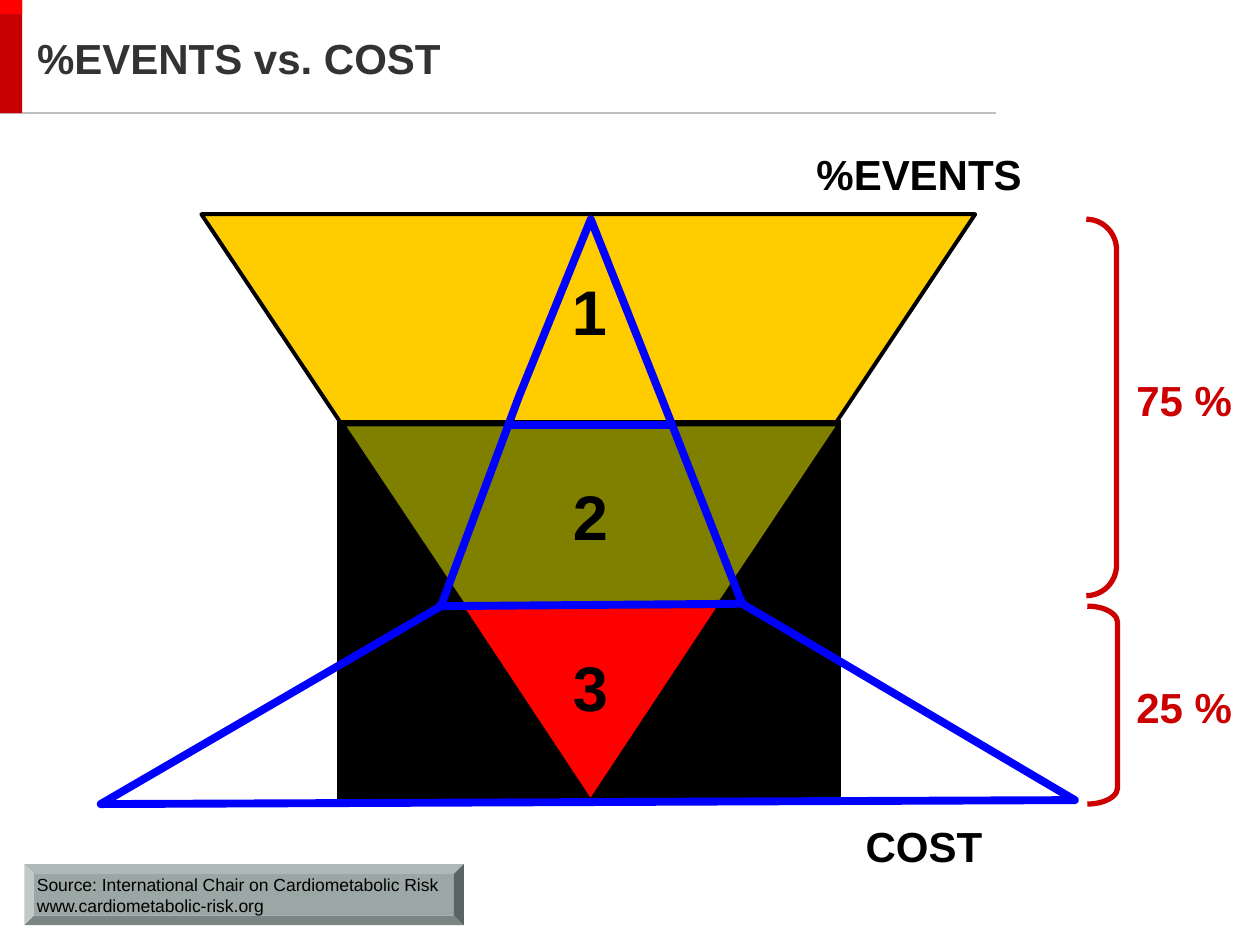
"""Build the events versus cost pyramid slide."""
from lxml import etree
from pptx import Presentation
from pptx import util as u
from pptx.dml.color import RGBColor
from pptx.enum import shapes, text
from pptx.oxml.ns import qn

BLACK = RGBColor(0x00, 0x00, 0x00)
TITLE_GREY = RGBColor(0x33, 0x33, 0x33)
RULE_GREY = RGBColor(0xC0, 0xC0, 0xC0)
SOURCE_GREY = RGBColor(0x9A, 0xA7, 0xA5)
DARK_RED = RGBColor(0xC8, 0x00, 0x00)
BRIGHT_RED = RGBColor(0xFE, 0x00, 0x00)
LABEL_RED = RGBColor(0xCC, 0x00, 0x00)
YELLOW = RGBColor(0xFF, 0xCC, 0x00)
OLIVE = RGBColor(0x80, 0x80, 0x00)
RED = RGBColor(0xFF, 0x00, 0x00)
BLUE = RGBColor(0x00, 0x00, 0xFF)

SHAPE = shapes.MSO_SHAPE


def style_shape(shape, fill=None, line=None, width=0.75):
    """Set the fill and outline of a shape and drop its shadow."""
    shape.shadow.inherit = False
    if fill is None:
        shape.fill.background()
    else:
        shape.fill.solid()
        shape.fill.fore_color.rgb = fill
    if line is None:
        shape.line.fill.background()
    else:
        shape.line.color.rgb = line
        shape.line.width = u.Pt(width)


def add_block(slide, kind, box, **style):
    """Add a preset shape; box is left, top, width and height in centimetres."""
    shape = slide.shapes.add_shape(kind, *map(u.Cm, box))
    style_shape(shape, **style)
    return shape


def add_inverted_triangle(slide, box, fill):
    """Add a black-edged triangle that points down."""
    triangle = add_block(slide, SHAPE.ISOSCELES_TRIANGLE, box,
                         fill=fill, line=BLACK, width=2.25)
    triangle._element.spPr.find(qn("a:xfrm")).set("flipV", "1")


def add_bracket(slide, box, curve):
    """Add a red right bracket with the given corner curve."""
    bracket = add_block(slide, SHAPE.RIGHT_BRACKET, box, line=LABEL_RED, width=3)
    bracket.adjustments[0] = curve


def add_line(slide, start, end, color, width):
    """Add a straight line between two points in centimetres."""
    line = slide.shapes.add_connector(
        shapes.MSO_CONNECTOR.STRAIGHT, *map(u.Cm, start + end))
    line.line.color.rgb = color
    line.line.width = u.Pt(width)
    etree.SubElement(line._element.spPr, qn("a:effectLst"))


def add_outline(slide, points, color, width):
    """Add a closed, unfilled outline through points in centimetres."""
    start, *rest = [(u.Cm(x), u.Cm(y)) for x, y in points]
    builder = slide.shapes.build_freeform(*start)
    builder.add_line_segments(rest, close=True)
    style_shape(builder.convert_to_shape(), line=color, width=width)


def write_text(shape, *lines, size=24, color=BLACK, bold=True, wrap=False,
               anchor=text.MSO_ANCHOR.TOP, margin=0.25):
    """Write left-aligned lines of formatted text into a shape."""
    frame = shape.text_frame
    frame.word_wrap = wrap
    frame.vertical_anchor = anchor
    frame.margin_left = frame.margin_right = u.Cm(margin)
    frame.text = "\n".join(lines)
    for paragraph in frame.paragraphs:
        paragraph.alignment = text.PP_ALIGN.LEFT
        paragraph.font.name = "Arial"
        paragraph.font.size = u.Pt(size)
        paragraph.font.bold = bold
        paragraph.font.color.rgb = color


def add_label(slide, box, words, **style):
    """Add a text box with one label."""
    write_text(slide.shapes.add_textbox(*map(u.Cm, box)), words, **style)


def add_header(slide):
    """Add the title, the red side bar and the rule below them."""
    add_line(slide, (0, 2.28), (20.07, 2.28), RULE_GREY, 0.75)
    add_block(slide, SHAPE.RECTANGLE, (0, 0, 0.45, 2.28), fill=DARK_RED)
    add_block(slide, SHAPE.RECTANGLE, (0, 0, 0.45, 0.28), fill=BRIGHT_RED)
    add_label(slide, (0.5, 0, 23.01, 2.31), "%EVENTS vs. COST",
              color=TITLE_GREY, wrap=True, anchor=text.MSO_ANCHOR.MIDDLE)


def add_source(slide):
    """Add the bevelled source note."""
    note = add_block(slide, SHAPE.BEVEL, (0.49, 17.42, 8.86, 1.23), fill=SOURCE_GREY)
    note.adjustments[0] = 0.16
    write_text(note, "Source: International Chair on Cardiometabolic Risk",
               "www.cardiometabolic-risk.org", size=10, bold=False,
               anchor=text.MSO_ANCHOR.MIDDLE, margin=0.06)


def add_event_pyramid(slide):
    """Add the three numbered levels of the inverted events pyramid."""
    levels = [
        ("1", None, (4.06, 4.32, 15.6, 11.68), YELLOW, (11.28, 5.36)),
        ("2", (6.81, 8.48, 10.13, 7.72), (6.91, 8.56, 10.01, 7.49), OLIVE, (11.3, 9.5)),
        ("3", (9.09, 12.17, 5.79, 3.94), (9.3, 12.22, 5.21, 3.94), RED, (11.3, 12.95)),
    ]
    for number, backdrop, triangle, color, corner in levels:
        if backdrop:
            add_block(slide, SHAPE.RECTANGLE, backdrop, fill=BLACK, line=BLACK)
        add_inverted_triangle(slide, triangle, color)
        add_label(slide, corner + (1.22, 1.78), number, size=36)


def add_cost_pyramid(slide):
    """Add the blue cost outline with its two level lines."""
    add_outline(slide, [(11.91, 4.42), (10.46, 8), (8.89, 12.22), (2.03, 16.21),
                        (21.67, 16.13), (14.96, 12.17), (13.34, 8.03)], BLUE, 4.5)
    add_line(slide, (8.81, 12.22), (15.04, 12.17), BLUE, 4.5)
    add_line(slide, (10.31, 8.56), (13.51, 8.56), BLUE, 4.5)


def main():
    """Build the slide and save it."""
    presentation = Presentation()
    presentation.slide_width = u.Cm(25.4)
    presentation.slide_height = u.Cm(19.05)
    slide = presentation.slides.add_slide(presentation.slide_layouts[6])
    add_header(slide)
    add_source(slide)
    add_event_pyramid(slide)
    add_bracket(slide, (21.9, 4.42, 0.61, 7.59), 1.02)
    add_bracket(slide, (21.92, 12.22, 0.61, 3.99), 0.54)
    add_cost_pyramid(slide)
    add_label(slide, (16.21, 2.87, 4.65, 1.27), "%EVENTS")
    add_label(slide, (17.2, 16.41, 2.87, 1.27), "COST")
    add_label(slide, (22.66, 7.42, 2.44, 1.27), "75 %", color=LABEL_RED)
    add_label(slide, (22.66, 13.61, 2.44, 1.27), "25 %", color=LABEL_RED)
    presentation.save("out.pptx")


if __name__ == "__main__":
    main()
